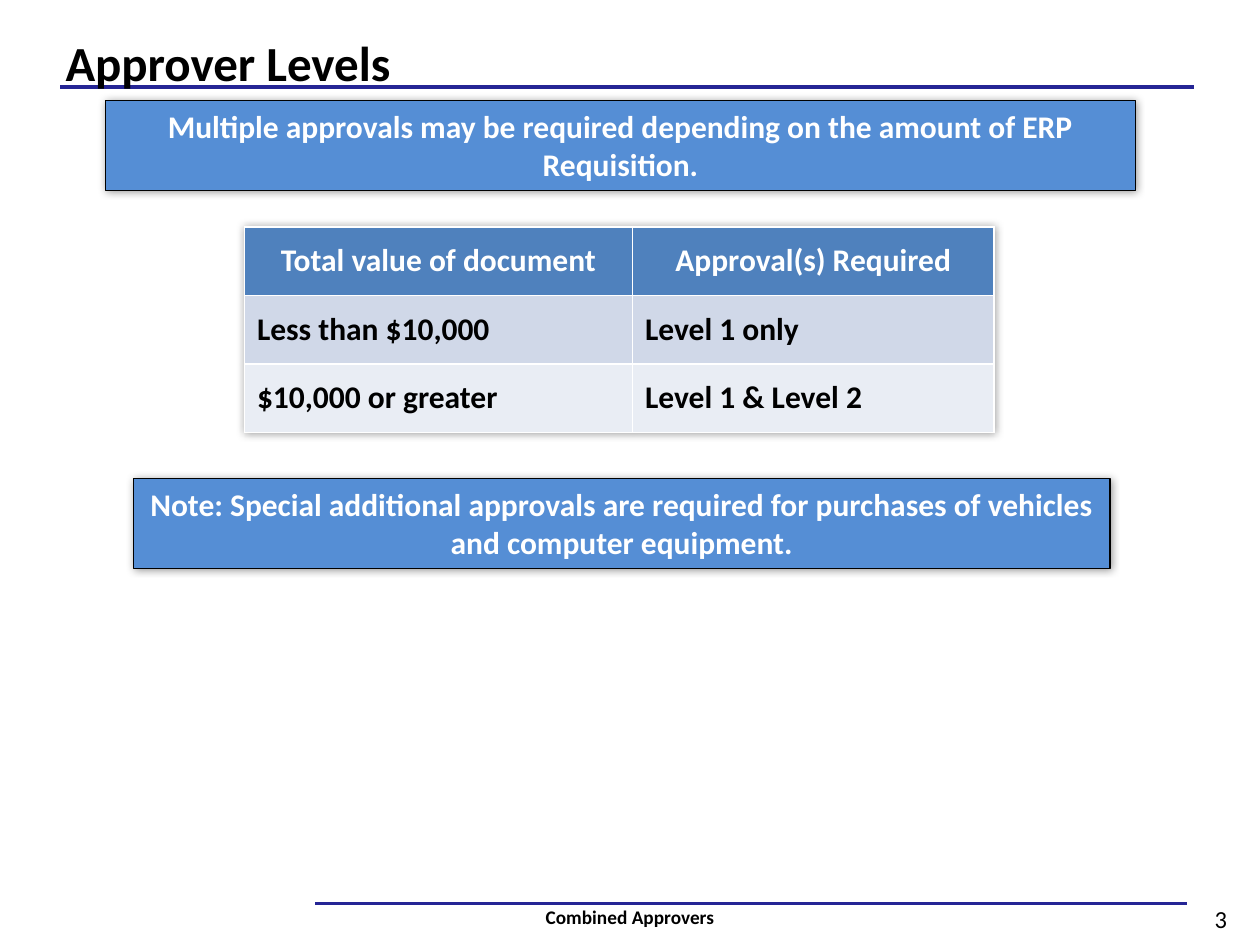
from lxml import etree
from pptx import Presentation, util as u
from pptx.dml.color import RGBColor
from pptx.enum import shapes, text
from pptx.oxml import ns

HUES = {"ink": "000000", "white": "FFFFFF", "rule": "252595", "box": "558ED5",
        "head": "4F81BD", "odd": "D0D8E8", "even": "E9EDF4"}
MID = text.PP_ALIGN.CENTER
LEFT = text.PP_ALIGN.LEFT


class Deck:
    """Draws styled elements on a slide, with a grid of 100 columns by 75 rows."""

    def __init__(self):
        self.file = Presentation()
        self.file.slide_width, self.file.slide_height = u.Inches(10), u.Inches(7.5)
        self.cell = self.file.slide_width / 100
        self.slide = self.file.slides.add_slide(self.file.slide_layouts[5])

    def grid(self, *spans):
        return [u.Emu(round(span * self.cell)) for span in spans]

    def hue(self, name):
        return RGBColor.from_string(HUES[name])

    def paint(self, item, name):
        item.fill.solid()
        item.fill.fore_color.rgb = self.hue(name)

    def letter(self, frame, words, size, hue="ink", bold=True, align=MID):
        frame.word_wrap = True
        frame.text = words
        para = frame.paragraphs[0]
        para.alignment = align
        font = para.font
        font.name, font.size, font.bold = "Calibri", u.Pt(size), bold
        font.color.rgb = self.hue(hue)

    def glow(self, effects):
        shade = etree.SubElement(effects, ns.qn("a:outerShdw"), blurRad=str(u.Pt(5)),
                                 dist="0", dir="0", algn="ctr", rotWithShape="0")
        tone = etree.SubElement(shade, ns.qn("a:srgbClr"), val=HUES["ink"])
        etree.SubElement(tone, ns.qn("a:alpha"), val="40000")

    def rule(self, left, right, row, width):
        line = self.slide.shapes.add_connector(
            shapes.MSO_CONNECTOR.STRAIGHT, *self.grid(left, row, right, row))
        line.line.color.rgb = self.hue("rule")
        line.line.width = u.Pt(width)
        etree.SubElement(line.element.spPr, ns.qn("a:effectLst"))

    def title(self, words, *place):
        head = self.slide.shapes.title
        head.left, head.top, head.width, head.height = self.grid(*place)
        head.text_frame.vertical_anchor = text.MSO_ANCHOR.MIDDLE
        self.letter(head.text_frame, words, 28, align=LEFT)
        head.element.getparent().append(head.element)

    def label(self, words, size, bold, *place):
        frame = self.slide.shapes.add_textbox(*self.grid(*place)).text_frame
        frame.vertical_anchor = text.MSO_ANCHOR.MIDDLE
        self.letter(frame, words, size, bold=bold)

    def banner(self, words, *place):
        box = self.slide.shapes.add_shape(shapes.MSO_SHAPE.RECTANGLE, *self.grid(*place))
        self.paint(box, "box")
        box.line.color.rgb = self.hue("ink")
        box.line.width = u.Pt(0.75)
        box.shadow.inherit = False
        self.glow(box.element.spPr.find(ns.qn("a:effectLst")))
        box.text_frame.vertical_anchor = text.MSO_ANCHOR.TOP
        self.letter(box.text_frame, words, 18, "white")

    def table(self, rows, left, top, widths, height):
        frame = self.slide.shapes.add_table(
            len(rows), len(widths), *self.grid(left, top, sum(widths), height * len(rows)))
        table = frame.table
        effects = etree.Element(ns.qn("a:effectLst"))
        self.glow(effects)
        table._tbl.tblPr.insert(0, effects)
        for col, width in zip(table.columns, self.grid(*widths)):
            col.width = width
        for r, row in enumerate(rows):
            fill = "head" if r == 0 else ("even", "odd")[r % 2]
            for c, words in enumerate(row):
                cell = table.cell(r, c)
                self.paint(cell, fill)
                cell.vertical_anchor = text.MSO_ANCHOR.MIDDLE
                self.letter(cell.text_frame, words, 18, "ink" if r else "white",
                            align=LEFT if r else MID)


def main():
    deck = Deck()
    deck.rule(4.8, 94.8, 6.9, 2.25)
    deck.rule(25, 94.2, 71.7, 1.5)
    deck.title("Approver Levels", 4.2, 0.9, 90.8, 8)
    deck.table([("Total value of document", "Approval(s) Required"),
                ("Less than $10,000", "Level 1 only"),
                ("$10,000 or greater", "Level 1 & Level 2")],
               19.4, 18, (30.8, 28.7), 5.44)
    deck.banner("Note: Special additional approvals are required for purchases of "
                "vehicles and computer equipment.", 10.6, 38, 77.5, 7.1)
    deck.banner("Multiple approvals may be required depending on the amount of "
                "ERP Requisition.", 8.4, 8, 81.7, 7.1)
    deck.label("Combined Approvers", 11, True, 20.1, 70.8, 59.8, 4)
    deck.label("3", 14, False, 93.9, 70.9, 6, 4)
    deck.file.save("out.pptx")


if __name__ == "__main__":
    main()
